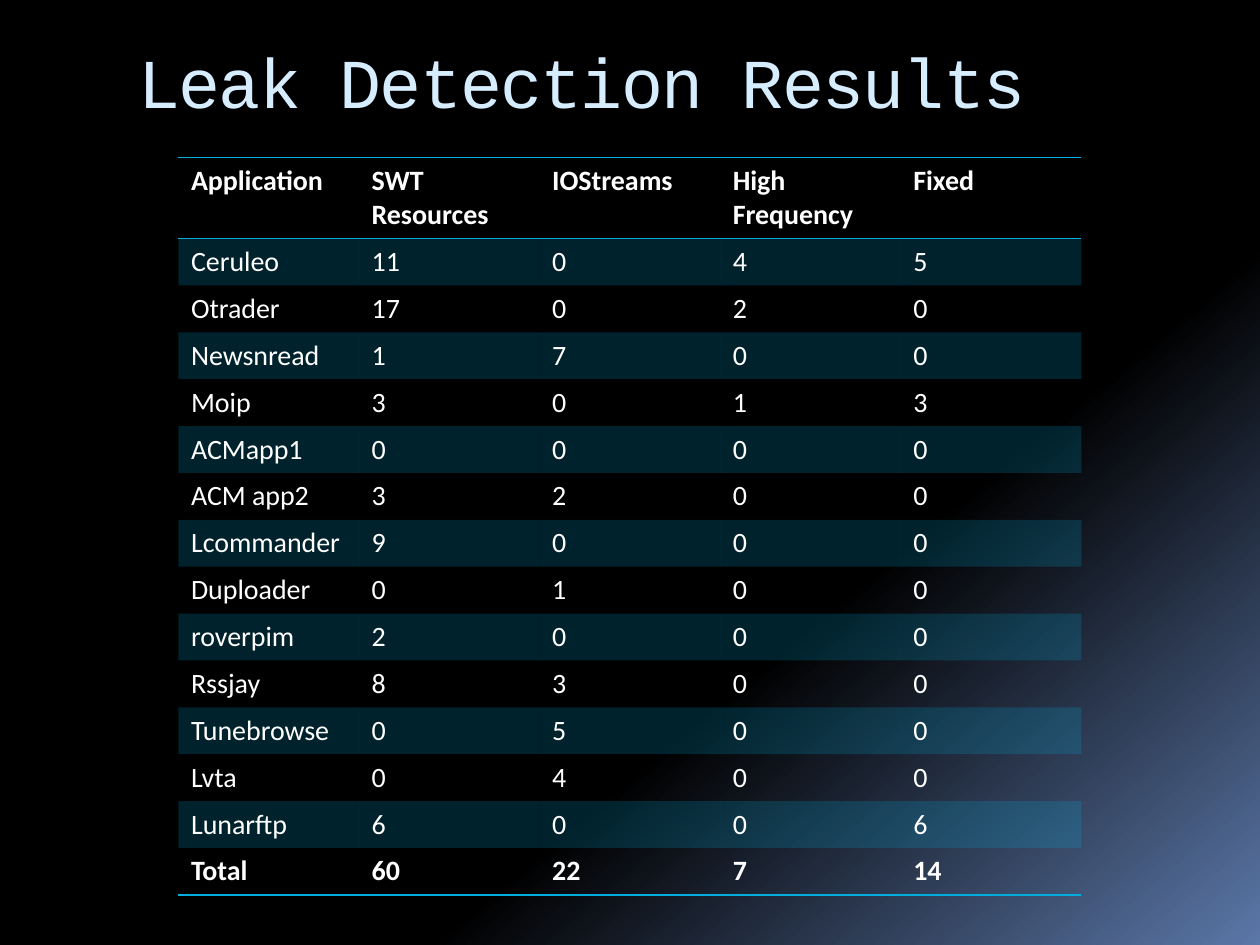
from lxml.etree import SubElement
from pptx import Presentation
from pptx.dml.color import RGBColor
from pptx.enum.text import MSO_ANCHOR
from pptx.oxml import parse_xml
from pptx.oxml.ns import nsdecls, qn
from pptx.util import Pt

TITLE = "Leak Detection Results"
HEADER = ("Application", "SWT Resources", "IOStreams", "High Frequency", "Fixed")
RESULTS = [
    ("Ceruleo", 11, 0, 4, 5),
    ("Otrader", 17, 0, 2, 0),
    ("Newsnread", 1, 7, 0, 0),
    ("Moip", 3, 0, 1, 3),
    ("ACMapp1", 0, 0, 0, 0),
    ("ACM app2", 3, 2, 0, 0),
    ("Lcommander", 9, 0, 0, 0),
    ("Duploader", 0, 1, 0, 0),
    ("roverpim", 2, 0, 0, 0),
    ("Rssjay", 8, 3, 0, 0),
    ("Tunebrowse", 0, 5, 0, 0),
    ("Lvta", 0, 4, 0, 0),
    ("Lunarftp", 6, 0, 0, 6),
]
TOTAL = ("Total", 60, 22, 7, 14)

WHITE = RGBColor(0xFF, 0xFF, 0xFF)
PALE_BLUE = RGBColor(0xD6, 0xEC, 0xFF)
CYAN = RGBColor(0x00, 0xAD, 0xDC)
BLACK = RGBColor(0x00, 0x00, 0x00)
SLATE = RGBColor(0x5B, 0x77, 0xA8)
BACKGROUND_STOPS = [(0, BLACK), (65, BLACK), (100, SLATE)]
BACKGROUND_ANGLE = 50
BAND_OPACITY = 20
PLAIN_TABLE_STYLE = "{2D5ABB26-0587-4C30-8999-92F81FD0307C}"

TABLE_LEFT, TABLE_TOP = 102, 90
COLUMN_WIDTH, HEADER_HEIGHT, ROW_HEIGHT = 103.2, 46.3, 26.8


def set_background(slide):
    stops = "".join(
        f'<a:gs pos="{position * 1000}"><a:srgbClr val="{color}"/></a:gs>'
        for position, color in BACKGROUND_STOPS
    )
    background = parse_xml(
        f'<p:bg {nsdecls("p", "a")}><p:bgPr><a:gradFill rotWithShape="1">'
        f'<a:gsLst>{stops}</a:gsLst><a:lin ang="{BACKGROUND_ANGLE * 60000}" scaled="0"/>'
        "</a:gradFill><a:effectLst/></p:bgPr></p:bg>"
    )
    slide.element.cSld.insert(0, background)


def add_title(slide):
    box = slide.shapes.add_textbox(Pt(72), Pt(12.24), Pt(612), Pt(72))
    frame = box.text_frame
    frame.word_wrap = True
    frame.vertical_anchor = MSO_ANCHOR.MIDDLE
    frame.margin_bottom = Pt(8)
    run = frame.paragraphs[0].add_run()
    run.text = TITLE
    run.font.name = "Courier New"
    run.font.size = Pt(40)
    run.font.color.rgb = PALE_BLUE
    run.font._element.set("spc", "-100")


def add_border(cell, side):
    line = parse_xml(
        f'<a:{side} {nsdecls("a")} w="{Pt(1)}"><a:solidFill>'
        f'<a:srgbClr val="{CYAN}"/></a:solidFill></a:{side}>'
    )
    cell._tc.get_or_add_tcPr().insert(0, line)


def fill_cell(cell, banded):
    if not banded:
        cell.fill.background()
        return
    cell.fill.solid()
    cell.fill.fore_color.rgb = CYAN
    color = cell._tc.tcPr.find(".//" + qn("a:srgbClr"))
    SubElement(color, qn("a:alpha"), val=str(BAND_OPACITY * 1000))


def add_results_table(slide):
    rows = [HEADER, *RESULTS, TOTAL]
    last = len(rows) - 1
    height = HEADER_HEIGHT + last * ROW_HEIGHT
    table = slide.shapes.add_table(
        len(rows), len(HEADER), Pt(TABLE_LEFT), Pt(TABLE_TOP),
        Pt(COLUMN_WIDTH * len(HEADER)), Pt(height),
    ).table
    table._tbl.tblPr.find(qn("a:tableStyleId")).text = PLAIN_TABLE_STYLE
    for column in table.columns:
        column.width = Pt(COLUMN_WIDTH)
    for row_index, values in enumerate(rows):
        table.rows[row_index].height = Pt(ROW_HEIGHT if row_index else HEADER_HEIGHT)
        for column_index, value in enumerate(values):
            cell = table.cell(row_index, column_index)
            cell.text = str(value)
            font = cell.text_frame.paragraphs[0].font
            font.name = "Calibri"
            font.size = Pt(16)
            font.bold = row_index in (0, last)
            font.color.rgb = WHITE
            fill_cell(cell, row_index % 2 == 1)
            if row_index in (0, last):
                add_border(cell, "lnB")
            if row_index == 0:
                add_border(cell, "lnT")


def main():
    presentation = Presentation()
    presentation.slide_width, presentation.slide_height = Pt(720), Pt(540)
    slide = presentation.slides.add_slide(presentation.slide_layouts[6])
    set_background(slide)
    add_title(slide)
    add_results_table(slide)
    presentation.save("out.pptx")


if __name__ == "__main__":
    main()
